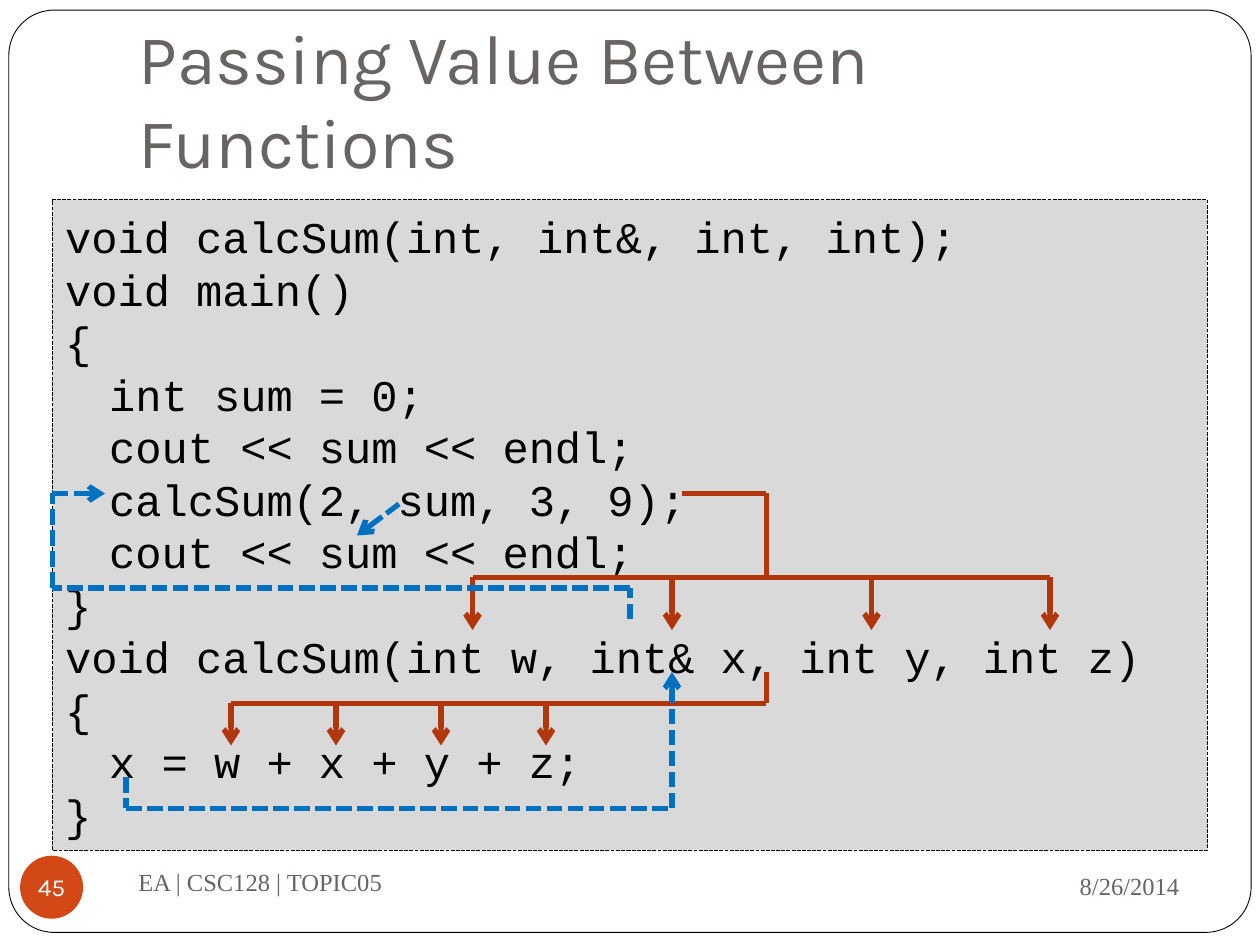
from dataclasses import dataclass
from itertools import pairwise

from lxml import etree
from pptx import Presentation, util as u
from pptx.dml.color import RGBColor
from pptx.enum import dml, shapes, text
from pptx.oxml.ns import qn


@dataclass(frozen=True)
class Theme:
    """Colours, typefaces and type sizes of the slide."""
    ink: str = "000000"
    grey: str = "696464"
    paper: str = "FFFFFF"
    panel: str = "D9D9D9"
    badge: str = "D34817"
    call: str = "B1360B"
    back: str = "0070C0"
    head: str = "Karla"
    code: str = "Courier New"
    note: str = "Times New Roman"
    title_pt: int = 40
    code_pt: int = 25
    note_pt: int = 14
    rule_pt: int = 3


T = Theme()
UNIT = u.Inches(1) // 12
CODE = [
    (0, "void calcSum(int, int&, int, int);"),
    (0, "void main()"),
    (0, "{"),
    (1, "int sum = 0;"),
    (1, "cout << sum << endl;"),
    (1, "calcSum(2, sum, 3, 9);"),
    (1, "cout << sum << endl;"),
    (0, "}"),
    (0, "void calcSum(int w, int& x, int y, int z)"),
    (0, "{"),
    (1, "x = w + x + y + z;"),
    (0, "}"),
]


def rgb(value):
    """Return a colour object for a hex value."""
    return RGBColor.from_string(value)


def place(sp, box):
    """Put a shape at a box given in grid units."""
    sp.left, sp.top, sp.width, sp.height = (round(v * UNIT) for v in box)


def write(p, words, font, size, color):
    """Add one formatted run to a paragraph."""
    r = p.add_run()
    r.text = words
    r.font.name, r.font.size = font, u.Pt(size)
    r.font.color.rgb = rgb(color)


def paint(sp, fill, line=None, width=0.5):
    """Give a shape a flat fill and an optional outline."""
    sp.fill.solid()
    sp.fill.fore_color.rgb = rgb(fill)
    if line:
        sp.line.color.rgb = rgb(line)
        sp.line.width = u.Pt(width)
    else:
        sp.line.fill.background()


def frame(s, box):
    """Draw the rounded page frame behind everything else."""
    sp = s.shapes.add_shape(shapes.MSO_SHAPE.ROUNDED_RECTANGLE, 0, 0, 0, 0)
    place(sp, box)
    sp.adjustments[0] = 0.049
    sp.shadow.inherit = False
    paint(sp, T.paper, T.ink)
    s.shapes._spTree.insert(2, sp._element)


def title(s, box, words):
    """Fill the title placeholder."""
    sp = s.shapes.title
    place(sp, box)
    tf = sp.text_frame
    tf.auto_size = text.MSO_AUTO_SIZE.NONE
    tf.vertical_anchor = text.MSO_ANCHOR.BOTTOM
    tf.margin_bottom = u.Inches(0.1)
    p = tf.paragraphs[0]
    p.alignment = text.PP_ALIGN.LEFT
    write(p, words, T.head, T.title_pt, T.grey)


def code_panel(s, box):
    """Fill the body placeholder with the program listing."""
    sp = s.placeholders[1]
    place(sp, box)
    paint(sp, T.panel, T.ink, 0.75)
    sp.line.dash_style = dml.MSO_LINE.SQUARE_DOT
    tf = sp.text_frame
    tf.auto_size = text.MSO_AUTO_SIZE.NONE
    tf.vertical_anchor = text.MSO_ANCHOR.MIDDLE
    for i, (level, words) in enumerate(CODE):
        p = tf.add_paragraph() if i else tf.paragraphs[0]
        p.level = level
        p.space_before = u.Pt(0)
        p.line_spacing = u.Pt(30)
        pPr = p._p.get_or_add_pPr()
        pPr.set("marL", str(u.Inches(0.6 if level else 0.3)))
        pPr.set("indent", str(u.Inches(-0.25 if level else -0.3)))
        etree.SubElement(pPr, qn("a:buNone"))
        write(p, words, T.code, T.code_pt, T.ink)


def route(s, box, points, color, arrow=False, dashed=False):
    """Join points by straight connectors, the last with an optional arrowhead."""
    segments = list(pairwise(points))
    for i, (start, end) in enumerate(segments):
        ends = [round((box[k] + pt[k]) * UNIT) for pt in (start, end) for k in (0, 1)]
        c = s.shapes.add_connector(shapes.MSO_CONNECTOR.STRAIGHT, *ends)
        c.line.color.rgb = rgb(color)
        c.line.width = u.Pt(T.rule_pt)
        if dashed:
            c.line.dash_style = dml.MSO_LINE.SQUARE_DOT
        if arrow and i == len(segments) - 1:
            etree.SubElement(c.line._get_or_add_ln(), qn("a:tailEnd"), type="arrow")
        etree.SubElement(c._element.spPr, qn("a:effectLst"))


def fan_out(s, box, stem, columns, bottom):
    """Lead a stem to a bar that drops an arrow at each column."""
    x, y = stem[-1]
    route(s, box, stem, T.call)
    route(s, box, [(columns[0], y), (max(x, columns[-1]), y)], T.call)
    for column in columns:
        route(s, box, [(column, y), (column, bottom)], T.call, arrow=True)


def value_flow(s, box):
    """Draw the argument arrows and the returning reference arrows."""
    fan_out(s, box, [(60, 28), (68, 28), (68, 36)], (40, 59, 78, 95), 41)
    fan_out(s, box, [(68, 45), (68, 48)], range(17, 48, 10), 52)
    for points in (
        [(7, 55), (7, 58), (59, 58), (59, 45)],
        [(55, 40), (55, 37), (0, 37), (0, 28), (5, 28)],
        [(33, 29), (29, 32)],
    ):
        route(s, box, points, T.back, arrow=True, dashed=True)


def note(s, box, words, align):
    """Add one footer text."""
    sp = s.shapes.add_textbox(0, 0, 0, 0)
    place(sp, box)
    tf = sp.text_frame
    tf.word_wrap = True
    tf.vertical_anchor = text.MSO_ANCHOR.MIDDLE
    tf.paragraphs[0].alignment = align
    write(tf.paragraphs[0], words, T.note, T.note_pt, T.grey)


def page_badge(s, box, number):
    """Draw the round page number."""
    sp = s.shapes.add_shape(shapes.MSO_SHAPE.OVAL, 0, 0, 0, 0)
    place(sp, box)
    sp.shadow.inherit = False
    paint(sp, T.badge)
    tf = sp.text_frame
    tf.word_wrap = False
    tf.vertical_anchor = text.MSO_ANCHOR.MIDDLE
    tf.margin_left = tf.margin_right = tf.margin_top = tf.margin_bottom = 0
    tf.paragraphs[0].alignment = text.PP_ALIGN.CENTER
    write(tf.paragraphs[0], number, T.head, T.note_pt, T.paper)


def main():
    """Build and save the slide."""
    prs = Presentation()
    prs.slide_width, prs.slide_height = u.Inches(10), u.Inches(7.5)
    s = prs.slides.add_slide(prs.slide_layouts[1])
    panel = (5, 19, 110, 62)
    frame(s, (0.84, 0.96, 118.32, 87.84))
    title(s, (12, 3.6, 102, 15), "Passing Value Between Functions")
    note(s, (81, 81.25, 32.5, 6.25), "8/26/2014", text.PP_ALIGN.RIGHT)
    note(s, (12, 81, 52, 6), "EA | CSC128 | TOPIC05", text.PP_ALIGN.LEFT)
    page_badge(s, (1.92, 81.5, 6, 6), "45")
    code_panel(s, panel)
    value_flow(s, panel)
    prs.save("out.pptx")


if __name__ == "__main__":
    main()
